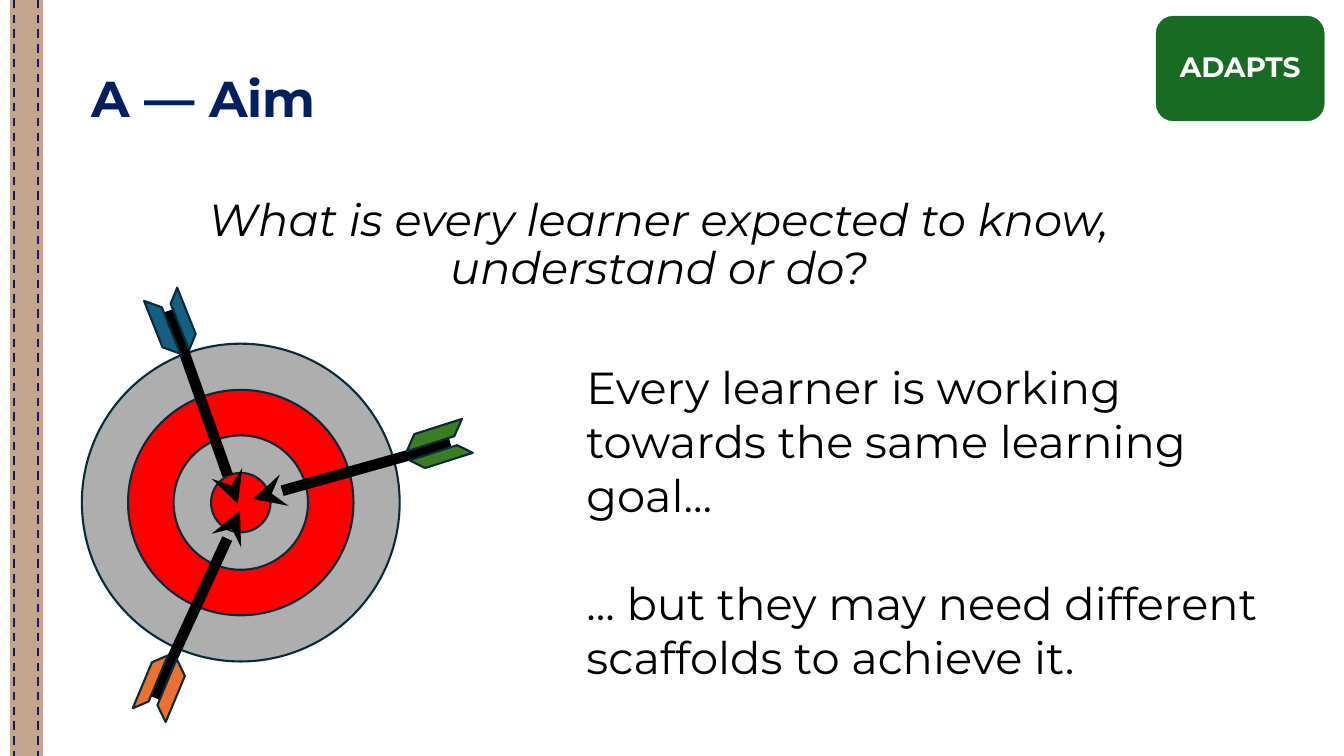
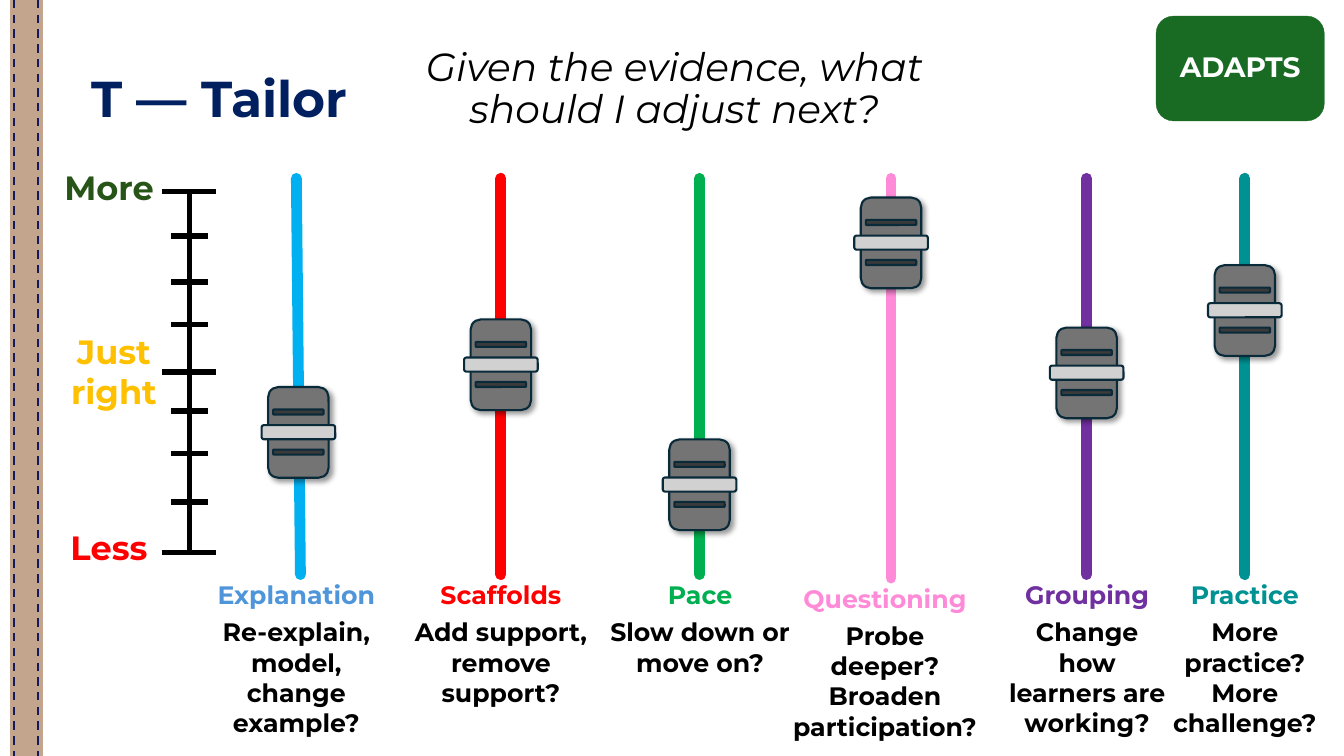
from math import cos, radians, sin

from lxml.etree import SubElement
from pptx import Presentation
from pptx.dml.color import RGBColor
from pptx.enum.dml import MSO_LINE
from pptx.enum.shapes import MSO_CONNECTOR, MSO_SHAPE
from pptx.enum.text import MSO_ANCHOR, PP_ALIGN
from pptx.oxml.ns import qn
from pptx.util import Pt

FONT = "Montserrat"
BLACK = RGBColor(0x00, 0x00, 0x00)
WHITE = RGBColor(0xFF, 0xFF, 0xFF)
NAVY = RGBColor(0x00, 0x20, 0x60)
STITCH = RGBColor(0x15, 0x19, 0x5D)
TAN = RGBColor(0xC3, 0xA4, 0x8C)
BADGE_GREEN = RGBColor(0x19, 0x6B, 0x24)
OUTLINE = RGBColor(0x09, 0x2A, 0x39)
SILVER = RGBColor(0xAE, 0xAE, 0xAE)
RED = RGBColor(0xFF, 0x00, 0x00)
LEAF = RGBColor(0x3B, 0x7D, 0x23)
ORANGE = RGBColor(0xE9, 0x71, 0x32)
PETROL = RGBColor(0x15, 0x60, 0x82)
SOFT_BLUE = RGBColor(0x4E, 0x95, 0xD9)
SKY = RGBColor(0x00, 0xB0, 0xF0)
GREEN = RGBColor(0x00, 0xB0, 0x50)
PINK = RGBColor(0xFF, 0x8A, 0xD8)
PURPLE = RGBColor(0x70, 0x30, 0xA0)
TEAL = RGBColor(0x00, 0x91, 0x93)
AMBER = RGBColor(0xFF, 0xC0, 0x00)
FOREST = RGBColor(0x27, 0x54, 0x17)
KNOB_GREY = RGBColor(0x74, 0x74, 0x74)
BAR_GREY = RGBColor(0xD1, 0xD1, 0xD1)
SLOT_GREY = RGBColor(0x3A, 0x3A, 0x3A)


def draw(parent, kind, bounds, fill, edge=OUTLINE, weight=1.5):
    shape = parent.shapes.add_shape(kind, *map(Pt, bounds))
    shape.shadow.inherit = False
    shape.fill.solid()
    shape.fill.fore_color.rgb = fill
    shape.line.color.rgb = edge
    shape.line.width = Pt(weight)
    return shape


def write(box, texts, size, bold=False, italic=False, align=PP_ALIGN.CENTER, spacing=1.0, gap=0):
    frame = box.text_frame
    frame.word_wrap = True
    for index, (text, colour) in enumerate(texts):
        para = frame.add_paragraph() if index else frame.paragraphs[0]
        para.text = text
        para.alignment = align
        para.line_spacing = spacing
        if index:
            para.space_before = Pt(gap)
        para.font.name = FONT
        para.font.size = Pt(size)
        para.font.bold = bold
        para.font.italic = italic
        para.font.color.rgb = colour


deck = Presentation()
deck.slide_width = Pt(960)
deck.slide_height = Pt(540)
pages = []
strokes = []

headings = [
    ("A — Aim", "What is every learner expected to know, understand or do?", (58.3, 137.5, 825, 93.6), 32),
    ("T — Tailor", "Given the evidence, what should I adjust next?", (289.4, 30.2, 384.5, 67.7), 28),
]
for title, question, bounds, size in headings:
    page = deck.slides.add_slide(deck.slide_layouts[6])
    pages.append(page)
    draw(page, MSO_SHAPE.RECTANGLE, (7.2, 0, 23, 540), TAN, TAN, 0.75)
    for x in (10.1, 27.4):
        stitch = page.shapes.add_connector(MSO_CONNECTOR.STRAIGHT, Pt(x), Pt(0), Pt(x), Pt(540))
        stitch.line.dash_style = MSO_LINE.DASH
        strokes.append((stitch, STITCH, 1.5))
    title_box = page.shapes.add_textbox(Pt(58.3), Pt(49), Pt(220), Pt(58.3))
    write(title_box, [(title, NAVY)], 36, bold=True, align=PP_ALIGN.LEFT, spacing=0.9)
    question_box = page.shapes.add_textbox(*map(Pt, bounds))
    write(question_box, [(question, BLACK)], size, italic=True, spacing=0.9)
    badge = draw(page, MSO_SHAPE.ROUNDED_RECTANGLE, (825.8, 11.5, 120.2, 74.9), BADGE_GREEN, BADGE_GREEN, 0.25)
    badge.text_frame.vertical_anchor = MSO_ANCHOR.MIDDLE
    write(badge, [("ADAPTS", WHITE)], 20, bold=True, spacing=0.9)

aim, tailor = pages

for diameter, colour in [(227, SILVER), (161, RED), (96, SILVER), (42.5, RED)]:
    draw(aim, MSO_SHAPE.OVAL, (172 - diameter / 2, 359 - diameter / 2, diameter, diameter), colour)

shafts = []
arrows = [
    ((180.7, 356.4), (321.8, 316.8), 342.3, LEAF),
    ((171.4, 365), (110.2, 498.2), 112.7, ORANGE),
    ((169.9, 360), (121, 221.8), 248.3, PETROL),
]
for tip, tail, angle, colour in arrows:
    arrow = aim.shapes.add_group_shape()
    shaft = arrow.shapes.add_connector(MSO_CONNECTOR.STRAIGHT, *map(Pt, tip + tail))
    shafts.append(shaft)
    strokes.append((shaft, BLACK, 7.75))
    across, down = cos(radians(angle)), sin(radians(angle))
    for offset, height, flipped in [(-9.2, 10.1, False), (6.9, 8.6, True)]:
        x = tail[0] - 9.2 * across - offset * down
        y = tail[1] - 9.2 * down + offset * across
        bounds = (x - 22.3, y - height / 2, 44.6, height)
        vane = draw(arrow, MSO_SHAPE.FLOWCHART_DATA, bounds, colour)
        vane.rotation = angle
        if flipped:
            vane._element.spPr.find(qn("a:xfrm")).set("flipV", "1")

goal_box = aim.shapes.add_textbox(Pt(411.8), Pt(253.4), Pt(516.2), Pt(239.8))
goals = [
    ("Every learner is working towards the same learning goal...", BLACK),
    ("... but they may need different scaffolds to achieve it.", BLACK),
]
write(goal_box, goals, 32, align=PP_ALIGN.LEFT, gap=39)

tracks = []
channels = [
    ("Explanation", "Re-explain, model, change example?", SOFT_BLUE, SKY, 135.36, 152.64, 7.2, 410.4, 211.7, 214.6, 276.5),
    ("Scaffolds", "Add support, remove support?", RED, RED, 288, 139.68, 7.2, 410.4, 357.8, 357.8, 228.2),
    ("Pace", "Slow down or move on?", GREEN, GREEN, 427.7, 144.7, 7.2, 410.4, 499.7, 499.7, 313.9),
    ("Questioning", "Probe deeper? Broaden participation?", PINK, PINK, 562.3, 139.7, 2.9, 412.9, 636.5, 636.5, 141.1),
    ("Grouping", "Change how learners are working?", PURPLE, PURPLE, 712.1, 128.9, 7.2, 410.4, 776.2, 776.2, 234),
    ("Practice", "More practice? More challenge?", TEAL, TEAL, 816.5, 145.4, 7.2, 410.4, 889.2, 889.2, 189.4),
]
knob_parts = [
    (0, 43.2, 64.8, KNOB_GREY),
    (27.2, 52.6, 10.1, BAR_GREY),
    (44.6, 36, 3.6, SLOT_GREY),
    (16, 36, 3.6, SLOT_GREY),
]
for name, prompt, ink, colour, left, width, inset, top, start, end, knob_top in channels:
    caption = tailor.shapes.add_textbox(Pt(left), Pt(top), Pt(width), Pt(121))
    caption.text_frame.margin_left = caption.text_frame.margin_right = Pt(inset)
    write(caption, [(name, ink), (prompt, BLACK)], 18, bold=True, gap=5)
    track = tailor.shapes.add_connector(MSO_CONNECTOR.STRAIGHT, Pt(end), Pt(top), Pt(start), Pt(127.4))
    tracks.append(track)
    strokes.append((track, colour, 7.75))
    knob = tailor.shapes.add_group_shape()
    middle = (start + end) / 2
    parts = [
        draw(knob, MSO_SHAPE.ROUNDED_RECTANGLE, (middle - wide / 2, knob_top + drop, wide, high), fill)
        for drop, wide, high, fill in knob_parts
    ]
    effects = parts[0]._element.spPr.find(qn("a:effectLst"))
    shadow = SubElement(effects, qn("a:outerShdw"), blurRad="50800", dist="38100", dir="2700000", algn="tl", rotWithShape="0")
    shade = SubElement(shadow, qn("a:srgbClr"), val="000000")
    SubElement(shade, qn("a:alpha"), val="40000")

scale = [(135.4, 136.8, 135.4, 394.6)]
scale += [(116, y, 154, y) for y in (136.8, 265.7, 394.6)]
scale += [(122.4, y, 148.4, y) for y in (168.5, 201.6, 231.8, 293.8, 324, 358.6)]
for ends in scale:
    mark = tailor.shapes.add_connector(MSO_CONNECTOR.STRAIGHT, *map(Pt, ends))
    strokes.append((mark, BLACK, 4))

levels = [
    ("More", FOREST, 38.9, 115.9, 90, PP_ALIGN.LEFT),
    ("Just right", AMBER, 41.8, 232.6, 79.2, PP_ALIGN.CENTER),
    ("Less", RED, 43.2, 373, 90, PP_ALIGN.LEFT),
]
for level, colour, left, top, width, align in levels:
    level_box = tailor.shapes.add_textbox(Pt(left), Pt(top), Pt(width), Pt(36))
    write(level_box, [(level, colour)], 24, bold=True, align=align)

for connector, colour, weight in strokes:
    connector.line.color.rgb = colour
    connector.line.width = Pt(weight)
    SubElement(connector._element.spPr, qn("a:effectLst"))
for shaft in shafts:
    SubElement(shaft._element.spPr.find(qn("a:ln")), qn("a:headEnd"), type="stealth")
for track in tracks:
    track._element.spPr.find(qn("a:ln")).set("cap", "rnd")

deck.save("out.pptx")
